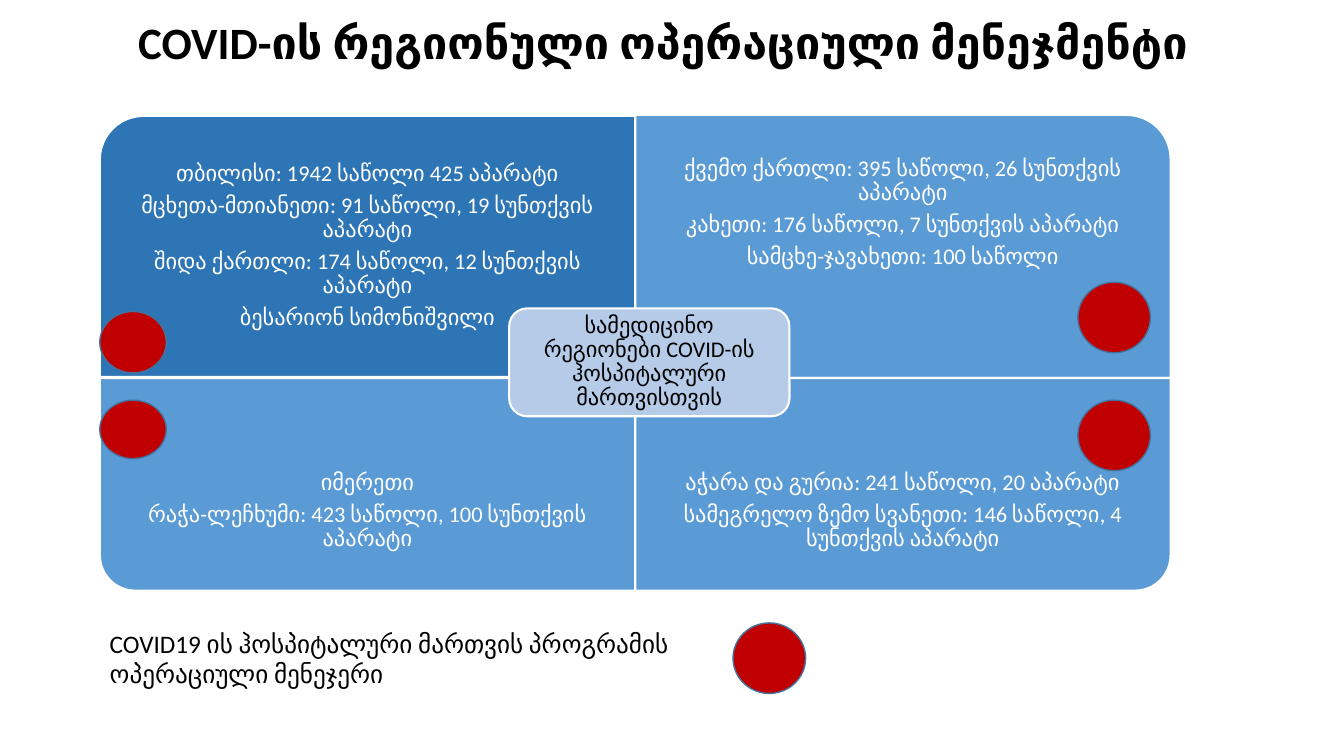
"""Build the slide on regional operational management of COVID care."""
from dataclasses import dataclass

from pptx import Presentation
from pptx.dml.color import RGBColor
from pptx.enum.shapes import MSO_SHAPE
from pptx.enum.text import MSO_ANCHOR, MSO_AUTO_SIZE, PP_ALIGN
from pptx.util import Inches, Pt

CORNER = MSO_SHAPE.ROUND_1_RECTANGLE
ROUNDED = MSO_SHAPE.ROUNDED_RECTANGLE
OVAL = MSO_SHAPE.OVAL
TOP, MIDDLE = MSO_ANCHOR.TOP, MSO_ANCHOR.MIDDLE
CENTER, LEFT = PP_ALIGN.CENTER, PP_ALIGN.LEFT
NO_FIT, GROW = MSO_AUTO_SIZE.NONE, MSO_AUTO_SIZE.SHAPE_TO_FIT_TEXT


@dataclass(frozen=True)
class Theme:
    font: str = "Calibri"
    black: str = "000000"
    white: str = "FFFFFF"
    dark_blue: str = "2E75B6"
    blue: str = "5B9BD5"
    pale_blue: str = "B5CBE7"
    red: str = "C00000"
    outline: str = "43739E"
    title_size: int = 32
    caption_size: int = 18
    region_size: int = 16


def apply(target, values):
    for name, value in values.items():
        setattr(target, name, value)


class RegionSlide:
    def __init__(self, deck, theme):
        self.theme = theme
        self.page = deck.slides.add_slide(deck.slide_layouts[5])

    def fill_text(self, box, lines, size, color, bold=False, para_format=None, frame_format=None):
        frame = box.text_frame
        apply(frame, {"word_wrap": True, "auto_size": NO_FIT, **(frame_format or {})})
        for index, line in enumerate(lines):
            para = frame.paragraphs[0] if index == 0 else frame.add_paragraph()
            apply(para, para_format or {})
            span = para.add_run()
            span.text = line
            apply(span.font, {"name": self.theme.font, "size": Pt(size), "bold": bold})
            span.font.color.rgb = RGBColor.from_string(color)

    def title(self, text):
        box = self.page.shapes.title
        apply(box, {"left": Inches(0.83), "top": 0,
                    "width": Inches(11.5), "height": Inches(1.45)})
        self.fill_text(box, [text], self.theme.title_size, self.theme.black, True,
                       {"alignment": CENTER, "line_spacing": 0.9},
                       {"vertical_anchor": MIDDLE, "margin_bottom": Inches(0.6)})

    def shape(self, kind, left, top, width, height, fill, line, weight):
        shape = self.page.shapes.add_shape(
            kind, Inches(left), Inches(top), Inches(width), Inches(height))
        shape.shadow.inherit = False
        shape.fill.solid()
        shape.fill.fore_color.rgb = RGBColor.from_string(fill)
        shape.line.color.rgb = RGBColor.from_string(line)
        shape.line.width = Pt(weight)
        return shape

    def region_text(self, box, lines, color, margin=0.12, **frame_format):
        margins = {f"margin_{side}": Inches(margin)
                   for side in ("left", "top", "right", "bottom")}
        self.fill_text(box, lines, self.theme.region_size, color,
                       para_format={"alignment": CENTER, "line_spacing": 0.9,
                                    "space_after": Pt(5.6)},
                       frame_format={"vertical_anchor": MIDDLE, **margins, **frame_format})

    def quadrant(self, left, top, width, height, rotation, fill, lines, **frame_format):
        wide, tall = (height, width) if rotation % 180 else (width, height)
        panel = self.shape(CORNER, left + (width - wide) / 2, top + (height - tall) / 2,
                           wide, tall, fill, self.theme.white, 1.5)
        panel.rotation = rotation
        text_height = 0.75 * height
        text_top = top + height - text_height if rotation in (90, 180) else top
        box = self.page.shapes.add_textbox(
            Inches(left), Inches(text_top), Inches(width), Inches(text_height))
        self.region_text(box, lines, self.theme.white, **frame_format)

    def hub(self, text):
        box = self.shape(ROUNDED, 5.05, 3.06, 2.78, 1.07,
                         self.theme.pale_blue, self.theme.white, 1.5)
        self.region_text(box, [text], self.theme.black)

    def caption(self, text):
        box = self.page.shapes.add_textbox(
            Inches(0.99), Inches(6.18), Inches(6.64), Inches(0.71))
        self.fill_text(box, [text], self.theme.caption_size, self.theme.black,
                       para_format={"alignment": LEFT}, frame_format={"auto_size": GROW})

    def manager_mark(self, left, top, width, height):
        self.shape(OVAL, left, top, width, height, self.theme.red, self.theme.outline, 1)


def main():
    deck = Presentation()
    apply(deck, {"slide_width": Inches(13.33), "slide_height": Inches(7.5)})
    theme = Theme()
    slide = RegionSlide(deck, theme)
    slide.title("COVID-ის რეგიონული ოპერაციული მენეჯმენტი")

    width = 5.31
    west, east = 0.99, 0.99 + width
    slide.quadrant(west, 1.15, width, 2.59, 270, theme.dark_blue, [
        "თბილისი: 1942 საწოლი 425 აპარატი",
        "მცხეთა-მთიანეთი: 91 საწოლი, 19 სუნთქვის აპარატი",
        "შიდა ქართლი: 174 საწოლი, 12 სუნთქვის აპარატი",
        "ბესარიონ სიმონიშვილი",
    ], vertical_anchor=TOP, margin_top=Inches(0.46))
    slide.quadrant(east, 1.14, width, 2.61, 0, theme.blue, [
        "ქვემო ქართლი: 395 საწოლი, 26 სუნთქვის აპარატი",
        "კახეთი: 176 საწოლი, 7 სუნთქვის აპარატი",
        "სამცხე-ჯავახეთი: 100 საწოლი",
    ])
    slide.quadrant(west, 3.75, width, 2.11, 180, theme.blue, [
        "იმერეთი",
        "რაჭა-ლეჩხუმი: 423 საწოლი, 100 სუნთქვის აპარატი",
    ])
    slide.quadrant(east, 3.75, width, 2.11, 90, theme.blue, [
        "აჭარა და გურია: 241 საწოლი, 20 აპარატი",
        "სამეგრელო ზემო სვანეთი: 146 საწოლი, 4 სუნთქვის აპარატი",
    ])
    slide.hub("სამედიცინო რეგიონები COVID-ის ჰოსპიტალური მართვისთვის")
    slide.caption("COVID19 ის ჰოსპიტალური მართვის პროგრამის ოპერაციული მენეჯერი")

    for left, top in ((10.69, 3.97), (10.69, 2.8), (7.27, 6.18)):
        slide.manager_mark(left, top, 0.72, 0.7)
    for top, height in ((3.97, 0.58), (3.09, 0.61)):
        slide.manager_mark(west, top, 0.66, height)
    deck.save("out.pptx")


if __name__ == "__main__":
    main()
